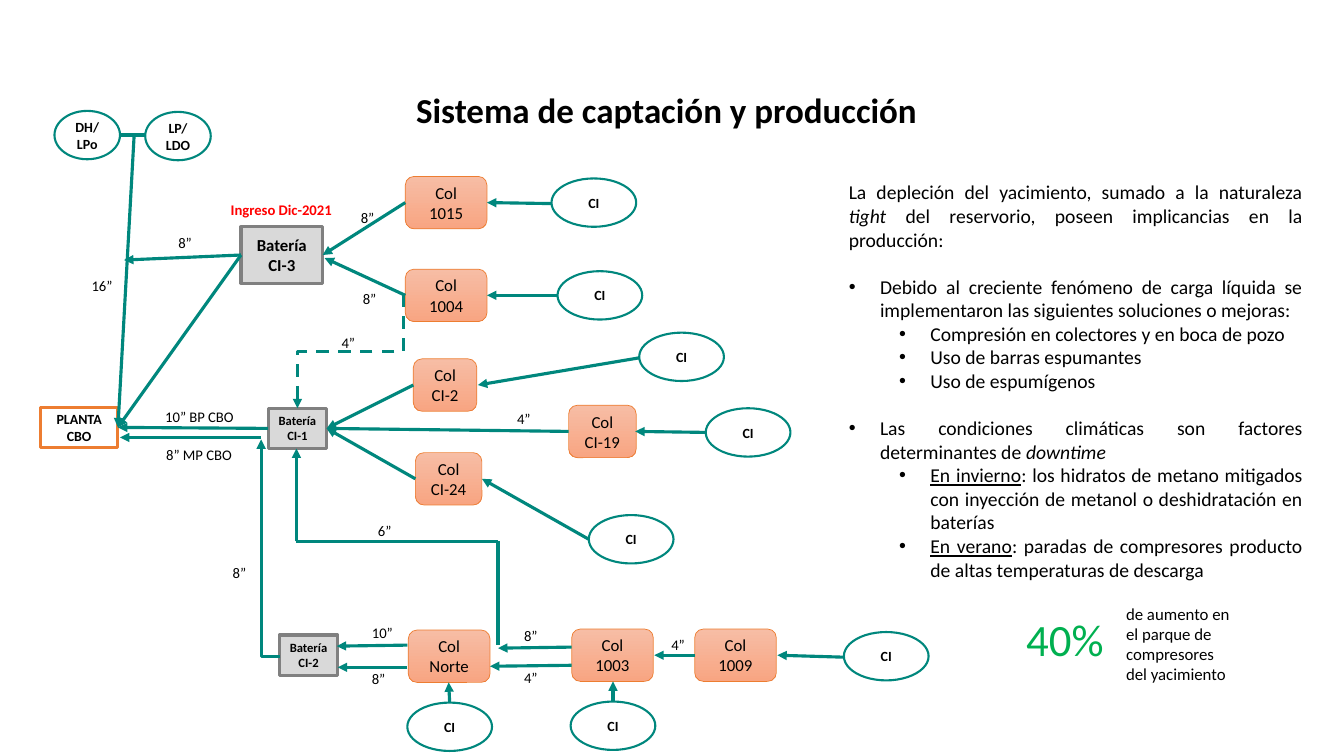
from dataclasses import dataclass
from typing import NamedTuple

from lxml import etree
from pptx import Presentation
from pptx import util as u
from pptx.dml.color import RGBColor
from pptx.enum import dml, shapes, text
from pptx.oxml.ns import qn

FONT = "Calibri"
TEAL, ORANGE, GREY, LIGHT_GREY = "00877D", "ED7D31", "808080", "D9D9D9"
BLACK, RED, GREEN = "000000", "FF0000", "00B050"
GRADIENT = ("F7BDA5", "F8A582")


class Style(NamedTuple):
    shape: int
    line: str
    line_width: float
    inset: float
    bold: bool
    fill: str | tuple[str, str] | None = None


PLANT = Style(shapes.MSO_SHAPE.RECTANGLE, ORANGE, 2.25, 0.05, True)
BATTERY = Style(shapes.MSO_SHAPE.RECTANGLE, GREY, 2.25, 0.05, True, LIGHT_GREY)
COLLECTOR = Style(shapes.MSO_SHAPE.ROUNDED_RECTANGLE, ORANGE, 0.5, 0.1, False, GRADIENT)
FIELD = Style(shapes.MSO_SHAPE.OVAL, TEAL, 1.5, 0.05, True)


@dataclass
class Node:
    text: str
    style: Style
    left: float
    top: float
    width: float = 0.81
    height: float = 0.52
    size: float = 12


@dataclass
class Pipe:
    start: tuple[float, float]
    end: tuple[float, float]
    arrow: bool = True
    dashed: bool = False
    bend: str = ""
    rotation: int = 0


@dataclass
class Label:
    text: str
    left: float
    top: float
    width: float = 0.34
    color: str = BLACK
    bold: bool = False


@dataclass
class Item:
    runs: list[tuple[str, str]]
    level: int | None = None
    space_before: float = 0


COLLECTORS = [
    ("Col Norte", 4.05, 6.25, 0.81), ("Col 1003", 5.67, 6.24, 0.81),
    ("Col 1004", 4.02, 2.67, 0.81), ("Col 1015", 4.02, 1.75, 0.81),
    ("Col CI-2", 4.1, 3.56, 0.63), ("Col CI-19", 5.64, 4.02, 0.67),
    ("Col 1009", 6.89, 6.24, 0.81), ("Col CI-24", 4.12, 4.49, 0.66),
]
CI_FIELDS = [(4.04, 6.97), (5.66, 6.96), (5.47, 1.77), (5.53, 2.69),
             (7, 4.05), (8.37, 6.27), (6.34, 3.3), (5.84, 5.11)]
NODES = [
    Node("PLANTA CBO", PLANT, 0.4, 4.04, 0.77, 0.4, 10),
    Node("Batería CI-3", BATTERY, 2.39, 2.25, 0.81, 0.56),
    Node("Batería CI-1", BATTERY, 2.66, 4.05, 0.58, 0.4, 9),
    Node("Batería CI-2", BATTERY, 2.77, 6.3, 0.58, 0.4, 9),
    Node("DH/LPo", FIELD, 0.54, 1.1, 0.65, 0.48, 10),
    Node("LP/\nLDO", FIELD, 1.44, 1.11, 0.65, 0.48, 10),
    *[Node(name, COLLECTOR, left, top, width) for name, left, top, width in COLLECTORS],
    *[Node("CI", FIELD, left, top, 0.84, 0.48, 10) for left, top in CI_FIELDS],
]
PIPES = [
    # Into the plant
    Pipe((2.66, 4.25), (1.17, 4.24)), Pipe((2.59, 4.34), (1.19, 4.34)),
    Pipe((2.39, 2.53), (1.23, 2.58)), Pipe((1.33, 1.35), (1.17, 4.24)),
    Pipe((2.39, 2.53), (1.17, 4.24)), Pipe((1.44, 1.34), (1.19, 1.34), arrow=False),
    # Collectors into batteries
    Pipe((4.02, 2.01), (3.2, 2.53)), Pipe((4.02, 2.93), (3.22, 2.56)),
    Pipe((4.1, 3.82), (3.24, 4.25)), Pipe((4.12, 4.75), (3.24, 4.25)),
    Pipe((5.64, 4.28), (3.24, 4.25)),
    Pipe((4.04, 6.4), (3.34, 6.41)), Pipe((4.04, 6.62), (3.35, 6.62)),
    # Between collectors
    Pipe((5.67, 6.42), (4.94, 6.43)), Pipe((5.67, 6.6), (4.86, 6.61)),
    Pipe((6.89, 6.5), (6.49, 6.5)),
    # Riser to battery CI-1
    Pipe((4.94, 5.37), (4.94, 6.4), arrow=False),
    Pipe((2.94, 5.37), (4.94, 5.37), arrow=False), Pipe((2.94, 5.37), (2.94, 4.45)),
    # Fields into collectors
    Pipe((5.47, 2.02), (4.83, 2.01)), Pipe((5.53, 2.93), (4.83, 2.93)),
    Pipe((7, 4.29), (6.3, 4.28)), Pipe((8.37, 6.52), (7.71, 6.5)),
    Pipe((6.34, 3.55), (4.74, 3.82)), Pipe((5.84, 5.35), (4.78, 4.75)),
    Pipe((6.08, 6.96), (6.08, 6.76)), Pipe((4.46, 6.97), (4.45, 6.77)),
    # Bent pipes, given by their frames before rotation
    Pipe((2.91, 2.96), (4.04, 4.01), dashed=True, bend="bentConnector3", rotation=90),
    Pipe((2.59, 4.36), (2.78, 6.51), bend="bentConnector2", rotation=180),
]
LABELS = [
    Label("8”", 5.1, 6.17), Label("4”", 5.1, 6.59), Label("4”", 6.56, 6.26),
    Label("10”", 3.59, 6.14, 0.41), Label("8”", 3.59, 6.6), Label("6”", 3.65, 5.13),
    Label("10” BP CBO", 1.54, 4, 0.89), Label("16”", 0.81, 2.7, 0.41),
    Label("8”", 1.67, 2.27), Label("8”", 3.5, 2.83), Label("8”", 3.48, 2.02),
    Label("8” MP CBO", 1.55, 4.37, 0.86), Label("8”", 2.21, 5.54),
    Label("4”", 5.03, 4.02), Label("4”", 3.29, 3.26),
    Label("Ingreso Dic-2021", 2.19, 1.94, 1.26, RED, True),
]
ITEMS = [
    Item([("La depleción del yacimiento, sumado a la naturaleza ", ""), ("tight", "i"),
          (" del reservorio, poseen implicancias en la producción:", "")]),
    Item([("Debido al creciente fenómeno de carga líquida se implementaron "
           "las siguientes soluciones o mejoras:", "")], 0, 17),
    Item([("Compresión en colectores y en boca de pozo", "")], 1),
    Item([("Uso de barras espumantes", "")], 1),
    Item([("Uso de espumígenos", "")], 1),
    Item([("Las condiciones climáticas son factores determinantes de ", ""),
          ("downtime", "i")], 0, 17),
    Item([("En invierno", "u"), (": los hidratos de metano mitigados con inyección de "
                                 "metanol o deshidratación en baterías", "")], 1),
    Item([("En verano", "u"), (": paradas de compresores producto de altas "
                               "temperaturas de descarga", "")], 1),
]


def rgb(value: str) -> RGBColor:
    return RGBColor.from_string(value)


def add_run(paragraph, content: str, *, size: float, color: str = BLACK, bold: bool = False,
            italic: bool = False, underline: bool = False) -> None:
    run = paragraph.add_run()
    run.text = content
    font = run.font
    font.name, font.size, font.color.rgb = FONT, u.Pt(size), rgb(color)
    font.bold, font.italic, font.underline = bold, italic, underline


def write(frame, content: str, *, align=text.PP_ALIGN.LEFT, wrap: bool = True, **style) -> None:
    frame.word_wrap = wrap
    for index, line in enumerate(content.split("\n")):
        paragraph = frame.add_paragraph() if index else frame.paragraphs[0]
        paragraph.alignment = align
        add_run(paragraph, line, **style)


def add_box(slide, left: float, top: float, width: float, height: float):
    return slide.shapes.add_textbox(*map(u.Inches, (left, top, width, height))).text_frame


def add_node(slide, node: Node) -> None:
    style = node.style
    shape = slide.shapes.add_shape(
        style.shape, *map(u.Inches, (node.left, node.top, node.width, node.height)))
    shape.shadow.inherit = False
    shape.line.color.rgb, shape.line.width = rgb(style.line), u.Pt(style.line_width)
    if style.fill is None:
        shape.fill.background()
    elif isinstance(style.fill, str):
        shape.fill.solid()
        shape.fill.fore_color.rgb = rgb(style.fill)
    else:
        shape.fill.gradient()
        shape.fill.gradient_angle = 270
        for stop, color in zip(shape.fill.gradient_stops, style.fill):
            stop.color.rgb = rgb(color)
    frame = shape.text_frame
    frame.margin_left = frame.margin_right = u.Inches(style.inset)
    frame.vertical_anchor = text.MSO_ANCHOR.MIDDLE
    write(frame, node.text, align=text.PP_ALIGN.CENTER, size=node.size, bold=style.bold)


def add_pipe(slide, pipe: Pipe) -> None:
    kind = shapes.MSO_CONNECTOR.ELBOW if pipe.bend else shapes.MSO_CONNECTOR.STRAIGHT
    connector = slide.shapes.add_connector(kind, *map(u.Inches, (*pipe.start, *pipe.end)))
    connector.line.color.rgb, connector.line.width = rgb(TEAL), u.Pt(2.25)
    if pipe.dashed:
        connector.line.dash_style = dml.MSO_LINE.DASH
    properties = connector._element.spPr
    if pipe.arrow:
        etree.SubElement(properties.find(qn("a:ln")), qn("a:tailEnd"), type="triangle")
    if pipe.bend:
        properties.find(qn("a:xfrm")).set("rot", str(pipe.rotation * 60000))
        properties.find(qn("a:prstGeom")).set("prst", pipe.bend)
    etree.SubElement(properties, qn("a:effectLst"))


def add_items(slide) -> None:
    frame = add_box(slide, 8.32, 1.74, 4.7, 4.11)
    frame.word_wrap = True
    for index, item in enumerate(ITEMS):
        paragraph = frame.add_paragraph() if index else frame.paragraphs[0]
        paragraph.alignment = text.PP_ALIGN.JUSTIFY
        if item.space_before:
            paragraph.space_before = u.Pt(item.space_before)
        if item.level is not None:
            paragraph.level = item.level
            properties = paragraph._p.get_or_add_pPr()
            properties.set("marL", str(u.Inches(0.31 + 0.5 * item.level)))
            properties.set("indent", str(-u.Inches(0.31)))
            etree.SubElement(properties, qn("a:buFont"), typeface="Arial")
            etree.SubElement(properties, qn("a:buChar"), char="•")
        for content, mark in item.runs:
            add_run(paragraph, content, size=14, italic=mark == "i", underline=mark == "u")


def main() -> None:
    presentation = Presentation()
    presentation.slide_width, presentation.slide_height = u.Inches(13.33), u.Inches(7.5)
    slide = presentation.slides.add_slide(presentation.slide_layouts[5])
    title = slide.shapes.title
    title.left, title.top, title.width, title.height = map(u.Inches, (0.2, 0.84, 12.82, 0.5))
    title.text_frame.vertical_anchor = text.MSO_ANCHOR.MIDDLE
    write(title.text_frame, "Sistema de captación y producción",
          align=text.PP_ALIGN.CENTER, size=25, bold=True)
    for node in NODES:
        add_node(slide, node)
    for pipe in PIPES:
        add_pipe(slide, pipe)
    for label in LABELS:
        write(add_box(slide, label.left, label.top, label.width, 0.28), label.text,
              wrap=False, size=10.5, color=label.color, bold=label.bold)
    add_items(slide)
    write(add_box(slide, 10.08, 6.02, 0.99, 0.64), "40%", size=32, color=GREEN)
    write(add_box(slide, 11.07, 5.94, 1.31, 0.91),
          "de aumento en el parque de compresores del yacimiento", size=12)
    presentation.save("out.pptx")


if __name__ == "__main__":
    main()
